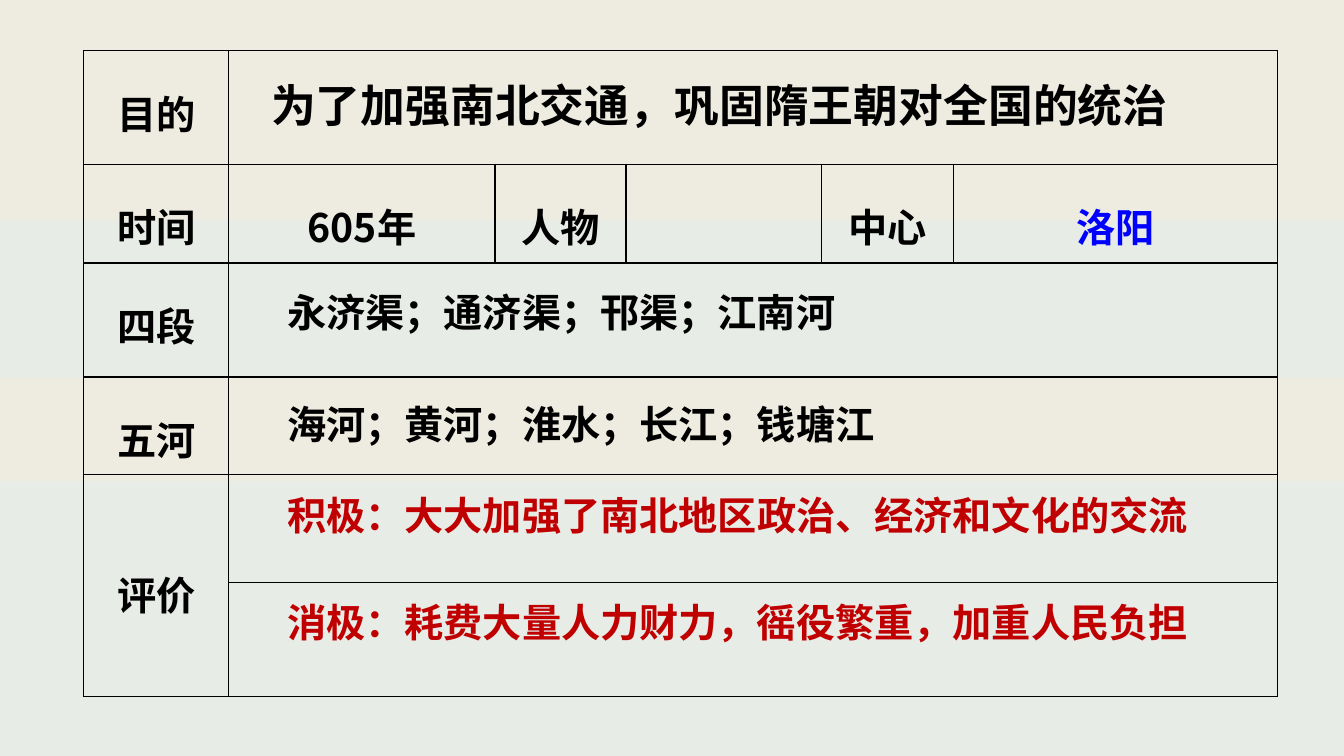
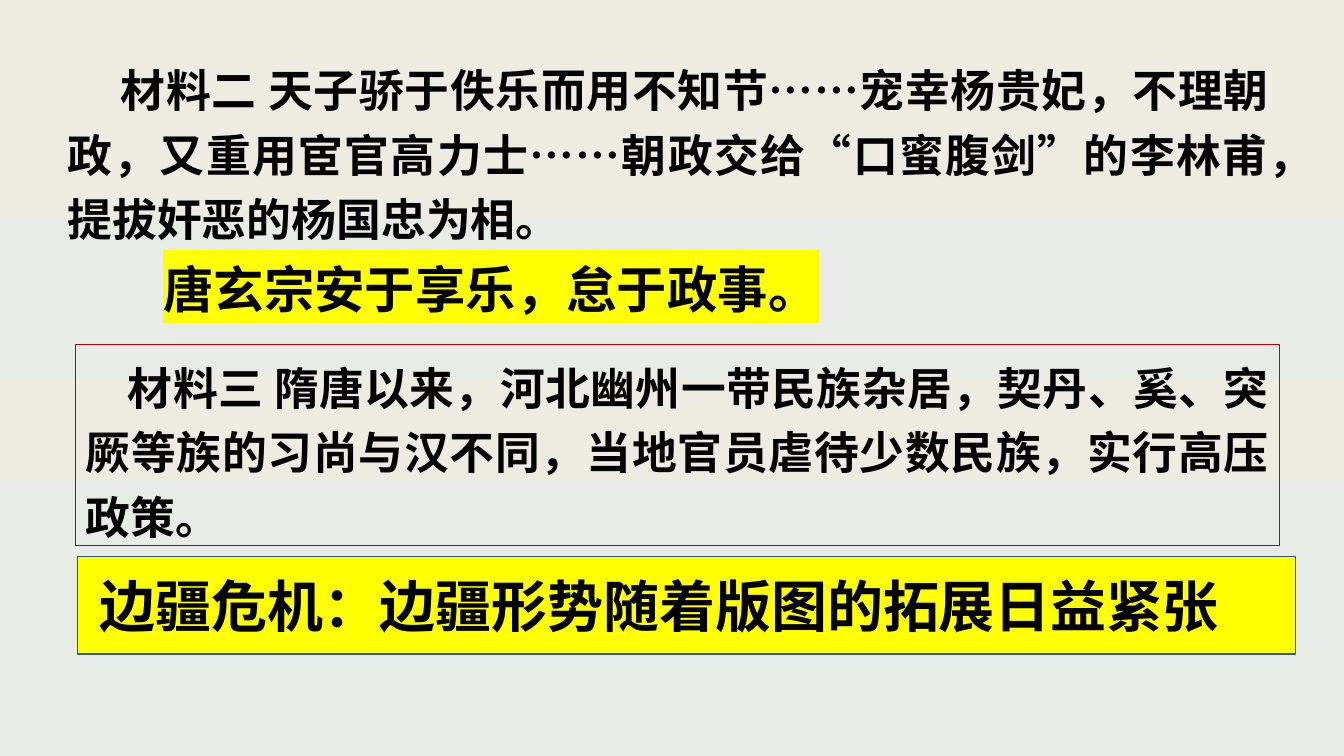
import lxml.etree
import pptx
import pptx.dml.color
import pptx.enum.shapes
import pptx.enum.text
import pptx.oxml.ns
import pptx.util

Inches = pptx.util.Inches
Pt = pptx.util.Pt
RGBColor = pptx.dml.color.RGBColor
Align = pptx.enum.text.PP_ALIGN
Anchor = pptx.enum.text.MSO_ANCHOR
Shape = pptx.enum.shapes.MSO_SHAPE
qn = pptx.oxml.ns.qn

CREAM = RGBColor(0xEE, 0xEC, 0xE1)
PALE_BLUE = RGBColor(0xDB, 0xEE, 0xF4)
BLACK = RGBColor(0, 0, 0)
BLUE = RGBColor(0, 0, 0xFF)
RED = RGBColor(0xC0, 0, 0)
YELLOW = RGBColor(0xFF, 0xFF, 0)
NAVY = RGBColor(0x32, 0x54, 0x91)
FONT = "Noto Sans CJK SC"


def add_color(parent, tag, color):
    element = lxml.etree.SubElement(parent, qn(tag))
    lxml.etree.SubElement(element, qn("a:srgbClr"), val=str(color))
    return element


class Deck:
    def __init__(self):
        self.presentation = pptx.Presentation()
        self.presentation.slide_width = Inches(13.33)
        self.presentation.slide_height = Inches(7.5)
        self.slide = None

    def new_slide(self):
        self.slide = self.presentation.slides.add_slide(self.presentation.slide_layouts[6])

    def background(self, bands):
        master = self.presentation.slide_master
        master.background.fill.solid()
        master.background.fill.fore_color.rgb = CREAM
        for index, (top, height) in enumerate(bands):
            band = self.box((0, top, 13.33, height), fill=PALE_BLUE)
            color = band.element.spPr.find(qn("a:solidFill")).find(qn("a:srgbClr"))
            lxml.etree.SubElement(color, qn("a:alpha"), val="34000")
            master.shapes.element.insert(2 + index, band.element)

    def box(self, place, kind=Shape.RECTANGLE, fill=None, line=None, width=1):
        shape = self.slide.shapes.add_shape(kind, *map(Inches, place))
        shape.shadow.inherit = False
        if fill is None:
            shape.fill.background()
        else:
            shape.fill.solid()
            shape.fill.fore_color.rgb = fill
        if line is None:
            shape.line.fill.background()
        else:
            shape.line.color.rgb = line
            shape.line.width = Pt(width)
        return shape

    def set_text(self, frame, text, size=28, color=BLACK, align=Align.LEFT,
                 spacing=None, indent=0, highlight=None):
        frame.text = text
        paragraph = frame.paragraphs[0]
        paragraph.alignment = align
        if spacing:
            paragraph.line_spacing = spacing
        if indent:
            properties = paragraph._p.get_or_add_pPr()
            properties.set("marL", "0")
            properties.set("indent", str(int(Inches(indent))))
        for run in paragraph.runs:
            run.font.size = Pt(size)
            run.font.bold = True
            run.font.color.rgb = color
            run.font.name = FONT
            properties = run._r.get_or_add_rPr()
            latin = properties.find(qn("a:latin"))
            lxml.etree.SubElement(properties, qn("a:ea"), typeface=FONT)
            if highlight:
                latin.addprevious(add_color(properties, "a:highlight", highlight))

    def fit(self, shape, text, **style):
        frame = shape.text_frame
        frame.word_wrap = True
        frame.auto_size = pptx.enum.text.MSO_AUTO_SIZE.SHAPE_TO_FIT_TEXT
        frame.vertical_anchor = Anchor.TOP
        self.set_text(frame, text, **style)

    def text(self, place, text, **style):
        self.fit(self.slide.shapes.add_textbox(*map(Inches, place)), text, **style)

    def table(self, place, columns, rows):
        frame = self.slide.shapes.add_table(len(rows), len(columns), *map(Inches, place))
        table = frame.table
        table.first_row = table.horz_banding = False
        for column, width in zip(table.columns, columns):
            column.width = Inches(width)
        for row, height in zip(table.rows, rows):
            row.height = Inches(height)
        for cell in table.iter_cells():
            properties = cell._tc.get_or_add_tcPr()
            for side in ("a:lnL", "a:lnR", "a:lnT", "a:lnB"):
                border = lxml.etree.SubElement(properties, qn(side), w=str(int(Pt(1))))
                add_color(border, "a:solidFill", BLACK)
            cell.fill.background()
        return table

    def cell(self, table, row, column, text, color=BLACK):
        self.set_text(table.cell(row, column).text_frame, text, color=color,
                      align=Align.CENTER, spacing=1.5)


def canal_slide(deck):
    table = deck.table((0.83, 0.5, 11.83, 6.42),
                       (1.44, 2.64, 1.3, 1.94, 1.31, 3.21),
                       (1.13, 0.98, 1.13, 0.97, 1.07, 1.13))
    for row in (0, 2, 3, 4, 5):
        table.cell(row, 1).merge(table.cell(row, 5))
    table.cell(4, 0).merge(table.cell(5, 0))
    for row, label in enumerate(("目的", "时间", "四段", "五河", "评价")):
        deck.cell(table, row, 0, label)
    table.cell(4, 0).margin_top = Inches(0.62)
    for column, label in ((1, "605年"), (2, "人物"), (4, "中心")):
        deck.cell(table, 1, column, label)
    deck.cell(table, 1, 5, "洛阳", BLUE)

    deck.text((2.59, 0.67, 9.67, 0.62), "为了加强南北交通，巩固隋王朝对全国的统治",
              size=32, align=Align.JUSTIFY, spacing=1.1)
    answers = (
        (2.81, 6.1, "永济渠；通济渠；邗渠；江南河", BLACK),
        (3.92, 6.1, "海河；黄河；淮水；长江；钱塘江", BLACK),
        (4.83, 9.21, "积极：大大加强了南北地区政治、经济和文化的交流", RED),
        (5.89, 9.34, "消极：耗费大量人力财力，徭役繁重，加重人民负担", RED),
    )
    for top, width, answer, color in answers:
        deck.text((2.75, top, width, 0.57), answer, color=color)


def crisis_slide(deck):
    source_style = dict(size=32, align=Align.JUSTIFY, spacing=1.2)
    deck.text((0.57, 0.47, 12.12, 2.04),
              "材料二 天子骄于佚乐而用不知节……宠幸杨贵妃，不理朝政，又重用宦官高力士……"
              "朝政交给“口蜜腹剑”的李林甫，提拔奸恶的杨国忠为相。",
              indent=0.53, **source_style)
    deck.text((1.52, 2.51, 9.92, 0.71), "唐玄宗安于享乐，怠于政事。",
              size=36, highlight=YELLOW)
    frontier = deck.box((0.75, 3.42, 11.94, 1.99), line=RED, width=0.75)
    deck.fit(frontier,
             "材料三 隋唐以来，河北幽州一带民族杂居，契丹、奚、突厥等族的习尚与汉不同，"
             "当地官员虐待少数民族，实行高压政策。",
             indent=0.42, **source_style)
    conclusion = deck.box((0.77, 5.52, 12.08, 0.97), Shape.FLOWCHART_PROCESS, YELLOW, NAVY)
    conclusion.text_frame.word_wrap = True
    conclusion.text_frame.vertical_anchor = Anchor.MIDDLE
    deck.set_text(conclusion.text_frame, "边疆危机：边疆形势随着版图的拓展日益紧张",
                  size=40, indent=0.12)


def main():
    deck = Deck()
    deck.new_slide()
    deck.background(((2.19, 1.56), (4.77, 2.73)))
    canal_slide(deck)
    deck.new_slide()
    crisis_slide(deck)
    deck.presentation.save("out.pptx")


if __name__ == "__main__":
    main()
